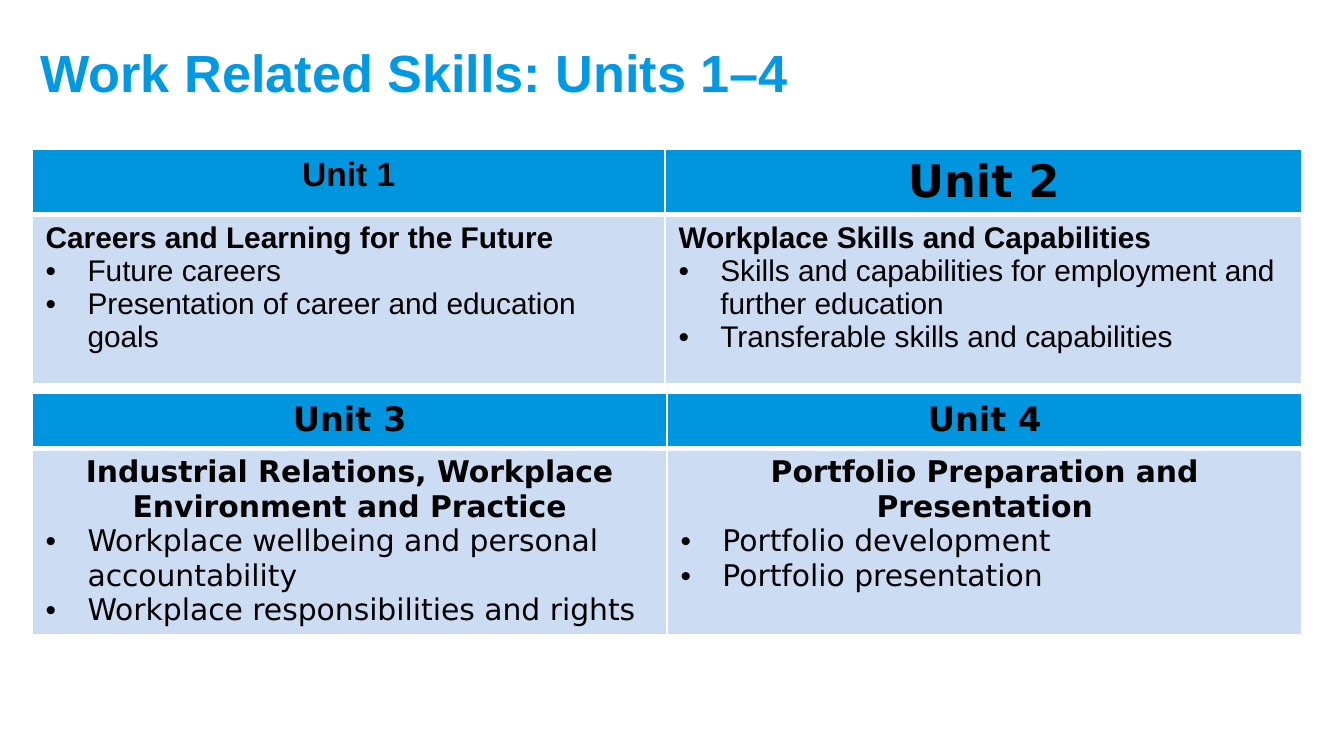
from dataclasses import dataclass

from lxml.etree import SubElement
from pptx import Presentation
from pptx.dml.color import RGBColor as Rgb
from pptx.enum.text import MSO_ANCHOR as Anchor, MSO_AUTO_SIZE as AutoSize, PP_ALIGN as Align
from pptx.oxml.ns import qn
from pptx.util import Cm, Pt


@dataclass(frozen=True)
class Theme:
    """Colours, fonts and type sizes of the slide."""
    title: str = "0099E3"
    header: str = "0096DF"
    body: str = "CCDDF3"
    text: str = "000000"
    border: str = "FFFFFF"
    sans: str = "Arial"
    wide: str = "DejaVu Sans"
    title_size: int = 28
    large_unit_size: int = 24
    unit_size: int = 18
    body_size: int = 16


@dataclass(frozen=True)
class Unit:
    """One unit: its name, heading, topics and type."""
    name: str
    heading: str
    topics: tuple
    name_font: str
    name_size: int
    body_font: str
    heading_align: Align


class UnitSlide:
    """Draws titles and unit tables in one style."""

    def __init__(self, deck, theme):
        self.theme = theme
        self.slide = deck.slides.add_slide(deck.slide_layouts[5])

    def add_text(self, paragraph, text, font, size, color, bold):
        """Add one formatted run."""
        run = paragraph.add_run()
        run.text = text
        run.font.name, run.font.size, run.font.bold = font, Pt(size), bold
        run.font.color.rgb = Rgb.from_string(color)

    def title(self, text, left, top, width, height):
        """Place and fill the title placeholder."""
        heading = self.slide.shapes.title
        heading.left, heading.top, heading.width, heading.height = map(Cm, (left, top, width, height))
        frame = heading.text_frame
        frame.word_wrap, frame.auto_size = True, AutoSize.NONE
        frame.vertical_anchor = Anchor.MIDDLE
        paragraph = frame.paragraphs[0]
        paragraph.alignment = Align.LEFT
        self.add_text(paragraph, text, self.theme.sans, self.theme.title_size, self.theme.title, True)

    def style_cell(self, cell, fill, borders):
        """Set borders as (side, points) pairs, then the fill."""
        properties = cell._tc.get_or_add_tcPr()
        for side, points in borders:
            line = SubElement(properties, qn(f"a:ln{side}"), w=str(Pt(points)))
            SubElement(SubElement(line, qn("a:solidFill")), qn("a:srgbClr"), val=self.theme.border)
        cell.fill.solid()
        cell.fill.fore_color.rgb = Rgb.from_string(fill)

    def bullet(self, paragraph, indent=0.79):
        """Give a paragraph a hanging bullet."""
        properties = paragraph._p.get_or_add_pPr()
        properties.set("marL", str(Cm(indent)))
        properties.set("indent", str(-Cm(indent)))
        SubElement(properties, qn("a:buFont"), typeface=self.theme.sans)
        SubElement(properties, qn("a:buChar"), char="•")

    def unit_table(self, units, left, top, widths, heights):
        """Add a table with one unit in each column."""
        theme = self.theme
        table = self.slide.shapes.add_table(
            2, len(units), Cm(left), Cm(top), Cm(sum(widths)), Cm(sum(heights))).table
        for column, width in zip(table.columns, widths):
            column.width = Cm(width)
        for row, height in zip(table.rows, heights):
            row.height = Cm(height)
        for index, unit in enumerate(units):
            name_cell, body_cell = table.cell(0, index), table.cell(1, index)
            self.style_cell(name_cell, theme.header, (("L", 1), ("R", 1), ("T", 1), ("B", 3)))
            self.style_cell(body_cell, theme.body, (("L", 1), ("R", 1), ("B", 1)))
            name = name_cell.text_frame.paragraphs[0]
            name.alignment = Align.CENTER
            self.add_text(name, unit.name, unit.name_font, unit.name_size, theme.text, True)
            heading = body_cell.text_frame.paragraphs[0]
            heading.alignment = unit.heading_align
            self.add_text(heading, unit.heading, unit.body_font, theme.body_size, theme.text, True)
            for topic in unit.topics:
                paragraph = body_cell.text_frame.add_paragraph()
                self.bullet(paragraph)
                self.add_text(paragraph, topic, unit.body_font, theme.body_size, theme.text, False)


def main():
    """Build and save the slide."""
    theme = Theme()
    deck = Presentation()
    deck.slide_width, deck.slide_height = Cm(25.4), Cm(14.29)
    page = UnitSlide(deck, theme)
    page.title("Work Related Skills: Units 1–4", 0.51, 0.15, 24.2, 2.39)
    first_units = (
        Unit("Unit 1", "Careers and Learning for the Future",
             ("Future careers", "Presentation of career and education goals"),
             theme.sans, theme.unit_size, theme.sans, Align.LEFT),
        Unit("Unit 2", "Workplace Skills and Capabilities",
             ("Skills and capabilities for employment and further education",
              "Transferable skills and capabilities"),
             theme.wide, theme.large_unit_size, theme.sans, Align.LEFT),
    )
    later_units = (
        Unit("Unit 3", "Industrial Relations, Workplace Environment and Practice",
             ("Workplace wellbeing and personal accountability",
              "Workplace responsibilities and rights"),
             theme.wide, theme.unit_size, theme.wide, Align.CENTER),
        Unit("Unit 4", "Portfolio Preparation and Presentation",
             ("Portfolio development", "Portfolio presentation"),
             theme.wide, theme.unit_size, theme.wide, Align.CENTER),
    )
    page.unit_table(first_units, 0.61, 2.82, (11.96, 12.04), (1.12, 3.2))
    page.unit_table(later_units, 0.61, 7.44, (12, 12), (1.04, 3.5))
    deck.save("out.pptx")


if __name__ == "__main__":
    main()
